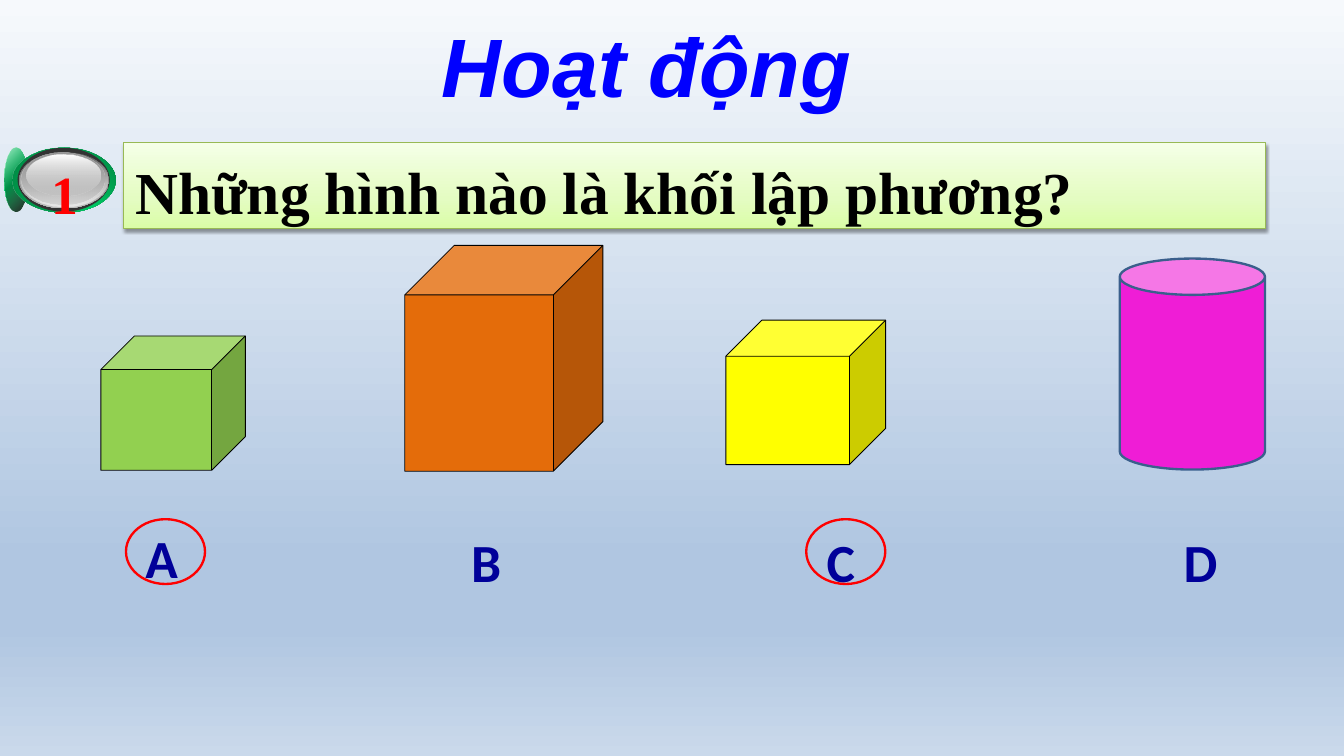
from dataclasses import dataclass

from lxml.etree import SubElement
from pptx import Presentation
from pptx.dml.color import RGBColor
from pptx.enum.shapes import MSO_SHAPE
from pptx.enum.text import MSO_ANCHOR, PP_ALIGN
from pptx.oxml.ns import qn
from pptx.util import Cm, Pt


@dataclass(frozen=True)
class Theme:
    sky: tuple = ((0, "F6F9FC"), (74, "B0C6E1"), (83, "B0C6E1"), (100, "CAD9EB"))
    banner: tuple = ((0, "DAFDA7"), (35, "E4FCC2"), (100, "F5FFE7"))
    knob_shine: tuple = ((0, "FFFFFF"), (50, "00CC66"), (100, "FFFFFF"))
    knob_shade: tuple = ((0, "00CC66", 32), (100, "000000", 90))
    rim: tuple = ((0, "006E37"), (50, "00CC66"), (100, "006E37"))
    rim_shade: tuple = ((0, "008241"), (100, "00CC66", 0))
    bezel: tuple = ((0, "333333"), (100, "333333"))
    steel: tuple = ((0, "595959"), (100, "C0C0C0"))
    steel_shine: tuple = ((0, "C0C0C0", 0), (100, "E9E9E9"))
    face: tuple = ((0, "989898"), (100, "C0C0C0", 48))
    face_shine: tuple = ((0, "FFFFFF"), (100, "C0C0C0", 38))
    banner_line: str = "98B955"
    black: str = "000000"
    red: str = "FF0000"
    title: str = "0000FF"
    label: str = "000099"
    green: str = "92D050"
    orange: str = "E46C0A"
    yellow: str = "FFFF00"
    magenta: str = "EF1DD6"
    can_line: str = "3A5F8C"
    title_size: int = 71
    question_size: int = 51
    label_size: int = 46


theme = Theme()


def paint_gradient(fill, element, stops, angle):
    fill.gradient()
    fill.gradient_angle = 360 - angle
    stop_list = element.find(".//" + qn("a:gsLst"))
    for old_stop in list(stop_list):
        stop_list.remove(old_stop)
    for position, color, *opacity in stops:
        stop = SubElement(stop_list, qn("a:gs"), pos=str(position * 1000))
        color_element = SubElement(stop, qn("a:srgbClr"), val=color)
        for percent in opacity:
            SubElement(color_element, qn("a:alpha"), val=str(percent * 1000))


def write_text(shape, text, font_name, size, color, top_inset=0.18, wrap=True):
    frame = shape.text_frame
    frame.word_wrap = wrap
    frame.vertical_anchor = MSO_ANCHOR.TOP
    frame.margin_left = frame.margin_right = Cm(0.36)
    frame.margin_top, frame.margin_bottom = Cm(top_inset), Cm(0)
    paragraph = frame.paragraphs[0]
    paragraph.text = text
    paragraph.alignment = PP_ALIGN.LEFT
    paragraph.font.name = font_name
    paragraph.font.size = Pt(size)
    paragraph.font.bold = True
    paragraph.font.color.rgb = RGBColor.from_string(color)
    return paragraph


presentation = Presentation()
presentation.slide_width = Cm(40.64)
presentation.slide_height = Cm(22.86)
slide = presentation.slides.add_slide(presentation.slide_layouts[6])
paint_gradient(slide.background.fill, slide.element, theme.sky, 90)

badge = slide.shapes.add_group_shape()
badge_layers = [
    ((0.13, 4.47, 0.71, 1.93), theme.knob_shine, 45),
    ((0.13, 4.47, 0.71, 1.93), theme.knob_shade, 45),
    ((0.38, 4.47, 3.12, 1.96), theme.rim, 315),
    ((0.38, 4.47, 3.12, 1.96), theme.rim_shade, 45),
    ((0.53, 4.47, 2.79, 1.93), theme.bezel, 90),
    ((0.58, 4.6, 2.72, 1.7), theme.steel, 90),
    ((0.61, 4.6, 2.64, 1.65), theme.steel_shine, 90),
    ((0.66, 4.62, 2.51, 1.55), theme.face, 90),
    ((0.79, 4.67, 2.24, 1.24), theme.face_shine, 90),
]
for box, stops, angle in badge_layers:
    layer = badge.shapes.add_shape(MSO_SHAPE.OVAL, *map(Cm, box))
    layer.shadow.inherit = False
    layer.line.fill.background()
    paint_gradient(layer.fill, layer.element, stops, angle)
number = badge.shapes.add_textbox(Cm(0.58), Cm(4.47), Cm(2.77), Cm(2.24))
paragraph = write_text(number, "1", "Times New Roman", theme.label_size, theme.red, 0.38)
paragraph.alignment = PP_ALIGN.CENTER

banner = slide.shapes.add_shape(MSO_SHAPE.RECTANGLE, Cm(3.73), Cm(4.32), Cm(34.54), Cm(2.59))
paint_gradient(banner.fill, banner.element, theme.banner, 270)
banner.line.color.rgb = RGBColor.from_string(theme.banner_line)
banner.line.width = Pt(0.75)
banner.shadow.inherit = False
effects = banner.element.find(".//" + qn("a:effectLst"))
shadow = SubElement(effects, qn("a:outerShdw"), blurRad=str(Pt(3.1)), dist=str(Pt(1.6)),
                    dir="5400000", rotWithShape="0")
shadow_color = SubElement(shadow, qn("a:srgbClr"), val=theme.black)
SubElement(shadow_color, qn("a:alpha"), val="38000")
write_text(banner, "Những hình nào là khối lập phương?", "Times New Roman",
           theme.question_size, theme.black, 0.38)

solids = [
    (MSO_SHAPE.CUBE, (3.05, 10.16, 4.37, 4.06), theme.green, theme.black, 0.75),
    (MSO_SHAPE.CUBE, (12.24, 7.42, 5.99, 6.83), theme.orange, theme.black, 0.75),
    (MSO_SHAPE.CUBE, (21.95, 9.68, 4.83, 4.37), theme.yellow, theme.black, 0.75),
    (MSO_SHAPE.CAN, (33.86, 7.82, 4.39, 6.38), theme.magenta, theme.can_line, 2),
]
for kind, box, color, line_color, line_width in solids:
    solid = slide.shapes.add_shape(kind, *map(Cm, box))
    solid.shadow.inherit = False
    solid.fill.solid()
    solid.fill.fore_color.rgb = RGBColor.from_string(color)
    solid.line.color.rgb = RGBColor.from_string(line_color)
    solid.line.width = Pt(line_width)

labels = [("A", 4.04, 15.7, 1.73), ("B", 13.89, 15.8, 1.65),
          ("C", 24.64, 15.8, 1.6), ("D", 35.43, 15.82, 1.78)]
for letter, left, top, width in labels:
    label = slide.shapes.add_textbox(Cm(left), Cm(top), Cm(width), Cm(2.34))
    write_text(label, letter, "Calibri", theme.label_size, theme.label, wrap=False)

for left in (3.81, 24.38):
    ring = slide.shapes.add_shape(MSO_SHAPE.OVAL, Cm(left), Cm(15.7), Cm(2.39), Cm(1.96))
    ring.shadow.inherit = False
    ring.fill.background()
    ring.line.color.rgb = RGBColor.from_string(theme.red)
    ring.line.width = Pt(2)

title = slide.shapes.add_textbox(Cm(13), Cm(0.05), Cm(15.57), Cm(3.4))
paragraph = write_text(title, "Hoạt động", "Arial", theme.title_size, theme.title, 0.4)
paragraph.font.italic = True

presentation.save("out.pptx")
